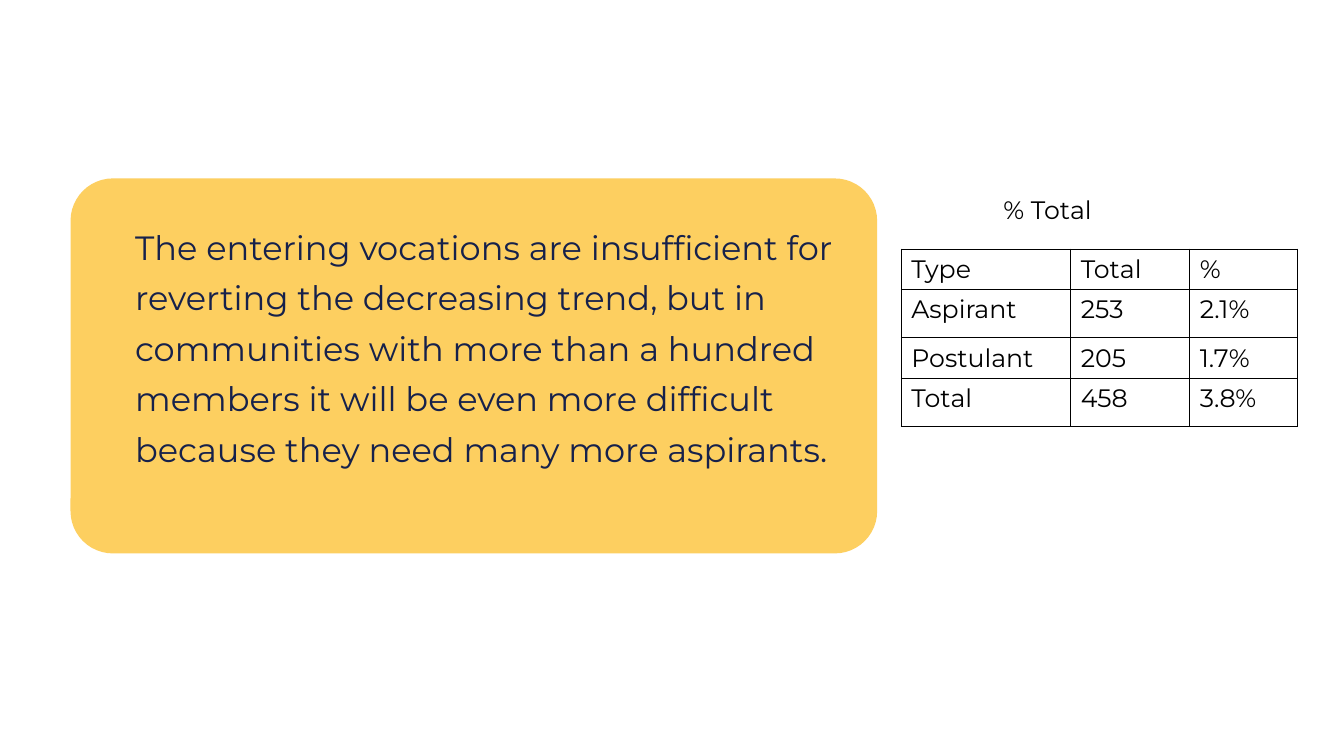
from dataclasses import dataclass

from lxml.etree import SubElement
from pptx import Presentation
from pptx.dml.color import RGBColor
from pptx.enum.shapes import MSO_SHAPE
from pptx.enum.text import MSO_ANCHOR, PP_ALIGN
from pptx.oxml.ns import qn
from pptx.util import Inches, Pt

MESSAGE = (
    "The entering vocations are insufficient for reverting the decreasing trend, "
    "but in communities with more than a hundred members it will be even more "
    "difficult because they need many more aspirants."
)
TABLE_LABEL = "% Total"
VOCATIONS = [
    ("Type", "Total", "%"),
    ("Aspirant", "253", "2.1%"),
    ("Postulant", "205", "1.7%"),
    ("Total", "458", "3.8%"),
]

PANEL = (0.7, 1.77, 8, 3.72)
PANEL_RADIUS = 0.42
MESSAGE_AREA = (1.34, 2.15, 7.11, 2.41)
LABEL_AREA = (7.9, 1.4, 4.98, 0.75)
TABLE_ORIGIN = (8.94, 2.47)
COLUMN_WIDTHS = (1.68, 1.18, 1.07)
ROW_HEIGHTS = (0.4, 0.48, 0.4, 0.48)


@dataclass(frozen=True)
class Theme:
    font: str = "Montserrat"
    panel: str = "FDCF60"
    message: str = "16214B"
    ink: str = "000000"
    message_size: int = 24
    table_size: int = 18
    message_leading: int = 36
    label_leading: int = 56
    border: float = 0.75


THEME = Theme()


def inches(lengths):
    return [Inches(length) for length in lengths]


def add_span(para, text, size, color):
    span = para.add_run()
    span.text = text
    span.font.name = THEME.font
    span.font.size = Pt(size)
    span.font.color.rgb = RGBColor.from_string(color)


def add_text(page, area, text, size, color, leading, align, inset):
    frame = page.shapes.add_textbox(*inches(area)).text_frame
    frame.word_wrap = True
    frame.vertical_anchor = MSO_ANCHOR.TOP
    frame.margin_left = frame.margin_right = Inches(inset)
    frame.margin_top = frame.margin_bottom = Inches(inset / 2)
    para = frame.paragraphs[0]
    para.alignment = align
    para.line_spacing = Pt(leading)
    add_span(para, text, size, color)


def add_panel(page):
    panel = page.shapes.add_shape(MSO_SHAPE.ROUNDED_RECTANGLE, *inches(PANEL))
    panel.adjustments[0] = PANEL_RADIUS / min(PANEL[2:])
    panel.shadow.inherit = False
    panel.fill.solid()
    panel.fill.fore_color.rgb = RGBColor.from_string(THEME.panel)
    panel.line.fill.background()


def add_borders(cell):
    properties = cell._tc.get_or_add_tcPr()
    for position, side in enumerate(("lnL", "lnR", "lnT", "lnB")):
        line = SubElement(properties, qn(f"a:{side}"), w=str(Pt(THEME.border)))
        fill = SubElement(line, qn("a:solidFill"))
        SubElement(fill, qn("a:srgbClr"), val=THEME.ink)
        properties.insert(position, line)


def add_vocations(page):
    size = inches((sum(COLUMN_WIDTHS), sum(ROW_HEIGHTS)))
    table = page.shapes.add_table(
        len(VOCATIONS), len(COLUMN_WIDTHS), *inches(TABLE_ORIGIN), *size
    ).table
    table.first_row = False
    table.horz_banding = False
    for column, width in zip(table.columns, inches(COLUMN_WIDTHS)):
        column.width = width
    for row, height, values in zip(table.rows, inches(ROW_HEIGHTS), VOCATIONS):
        row.height = height
        for cell, value in zip(row.cells, values):
            cell.fill.background()
            add_borders(cell)
            add_span(cell.text_frame.paragraphs[0], value, THEME.table_size, THEME.ink)


def main():
    deck = Presentation()
    deck.slide_width, deck.slide_height = inches((13.33, 7.5))
    page = deck.slides.add_slide(deck.slide_layouts[6])
    add_panel(page)
    add_text(page, MESSAGE_AREA, MESSAGE, THEME.message_size, THEME.message,
             THEME.message_leading, PP_ALIGN.LEFT, 0)
    add_text(page, LABEL_AREA, TABLE_LABEL, THEME.table_size, THEME.ink,
             THEME.label_leading, PP_ALIGN.CENTER, 0.1)
    add_vocations(page)
    deck.save("out.pptx")


if __name__ == "__main__":
    main()
